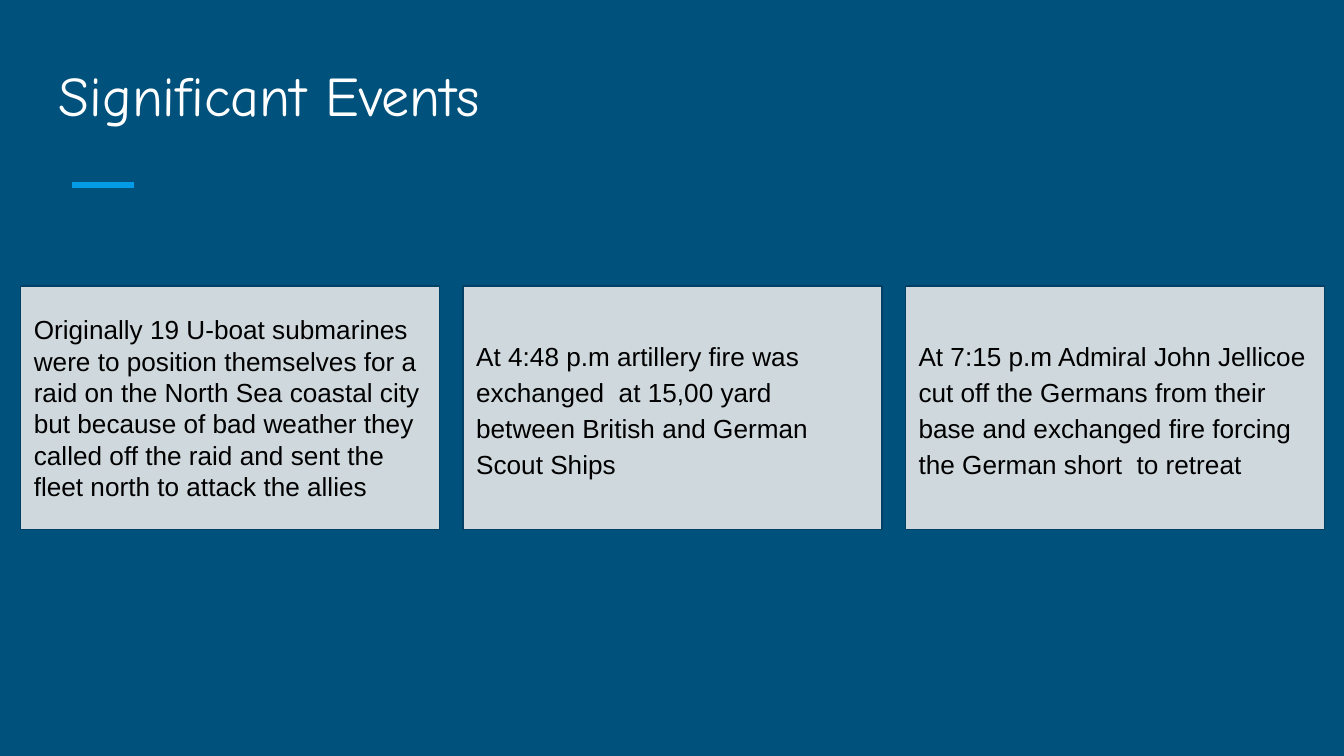
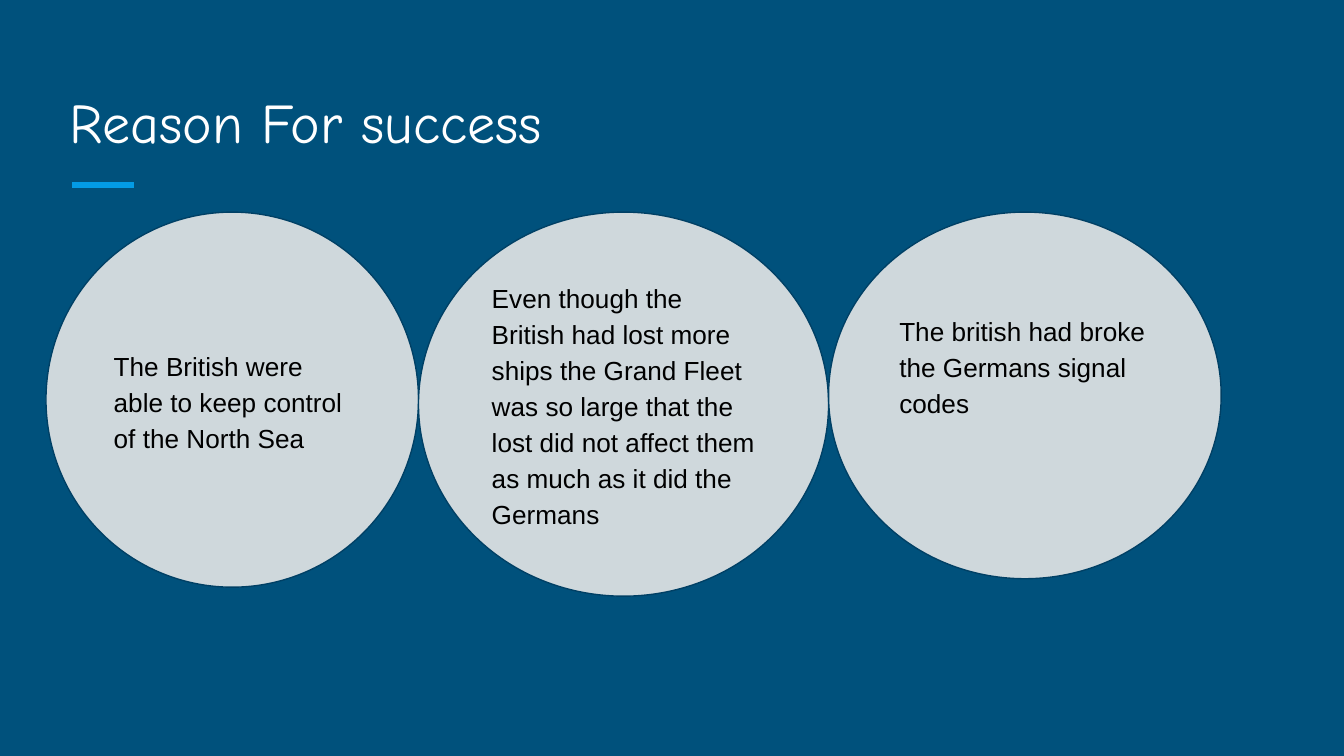
from lxml.etree import SubElement
from pptx import Presentation
from pptx.dml.color import RGBColor
from pptx.enum.shapes import MSO_CONNECTOR, MSO_SHAPE
from pptx.enum.text import MSO_ANCHOR, MSO_AUTO_SIZE, PP_ALIGN
from pptx.oxml.ns import qn
from pptx.util import Cm, Pt

theme = {
    "back": RGBColor.from_string("00517C"),
    "bar": RGBColor.from_string("039BE5"),
    "card": RGBColor.from_string("CFD8DC"),
    "edge": RGBColor.from_string("004065"),
    "title": {"name": "Comic Neue", "size": Pt(30), "bold": False,
              "color": RGBColor.from_string("FFFFFF")},
    "body": {"name": "Arial", "size": Pt(14), "bold": False,
             "color": RGBColor.from_string("000000")},
}
pad = Cm(0.25)
frame = {"word_wrap": True, "auto_size": MSO_AUTO_SIZE.NONE,
         "margin_left": pad, "margin_right": pad,
         "margin_top": pad, "margin_bottom": pad}


def write(shape, text, style, anchor, space=1.0):
    box = shape.text_frame
    for key, value in {**frame, "vertical_anchor": anchor}.items():
        setattr(box, key, value)
    para = box.paragraphs[0]
    para.alignment = PP_ALIGN.LEFT
    para.line_spacing = space
    run = para.add_run()
    run.text = text
    for key, value in theme[style].items():
        if key == "color":
            run.font.color.rgb = value
        else:
            setattr(run.font, key, value)


def card(slide, kind, place, text, space):
    shape = slide.shapes.add_shape(kind, *[Cm(n) for n in place])
    shape.shadow.inherit = False
    shape.fill.solid()
    shape.fill.fore_color.rgb = theme["card"]
    shape.line.color.rgb = theme["edge"]
    shape.line.width = Pt(0.75)
    write(shape, text, "body", MSO_ANCHOR.MIDDLE, space)
    return shape


deck = Presentation()
deck.slide_width = Cm(25.4)
deck.slide_height = Cm(14.29)
fill = deck.slide_master.background.fill
fill.solid()
fill.fore_color.rgb = theme["back"]
layout = deck.slide_layouts[5]

heads = [
    ("Significant Events", (0.86, 1.07, 23.67, 1.6)),
    ("Reason For success", (1.07, 1.27, 23.24, 1.9)),
]
slides = []
for text, place in heads:
    slide = deck.slides.add_slide(layout)
    title = slide.shapes.title
    for key, value in zip(("left", "top", "width", "height"), place):
        setattr(title, key, Cm(value))
    write(title, text, "title", MSO_ANCHOR.BOTTOM)
    slides.append(slide)
events, reasons = slides

bar = events.shapes.add_connector(
    MSO_CONNECTOR.STRAIGHT, Cm(1.37), Cm(3.5), Cm(2.54), Cm(3.5))
bar.line.color.rgb = theme["bar"]
bar.line.width = Pt(3)
SubElement(bar.element.spPr, qn("a:effectLst"))
layout.placeholders[0].element.getparent().append(bar.element)

facts = [
    ("Originally 19 U-boat submarines were to position themselves for a raid "
     "on the North Sea coastal city but because of bad weather they called "
     "off the raid and sent the fleet north to attack the allies", 1.0),
    ("At 4:48 p.m artillery fire was exchanged  at 15,00 yard between British "
     "and German Scout Ships", 1.15),
    ("At 7:15 p.m Admiral John Jellicoe cut off the Germans from their base "
     "and exchanged fire forcing the German short  to retreat", 1.15),
]
for i, (text, space) in enumerate(facts):
    card(events, MSO_SHAPE.RECTANGLE, (0.39 + 8.36 * i, 5.41, 7.92, 4.6),
         text, space)

causes = [
    ("The British were able to keep control of the North Sea",
     7.04, 7.09, 0.25),
    ("Even though the British had lost more ships the Grand Fleet was so "
     "large that the lost did not affect them as much as it did the Germans",
     7.75, 7.26, 0.25),
    ("The british had broke the Germans signal codes", 7.42, 6.93, 1.4),
]
left = 0.87
for text, width, height, foot in causes:
    oval = card(reasons, MSO_SHAPE.OVAL, (left, 4.01, width, height),
                text, 1.15)
    oval.text_frame.margin_bottom = Cm(foot)
    left += width

deck.save("out.pptx")
